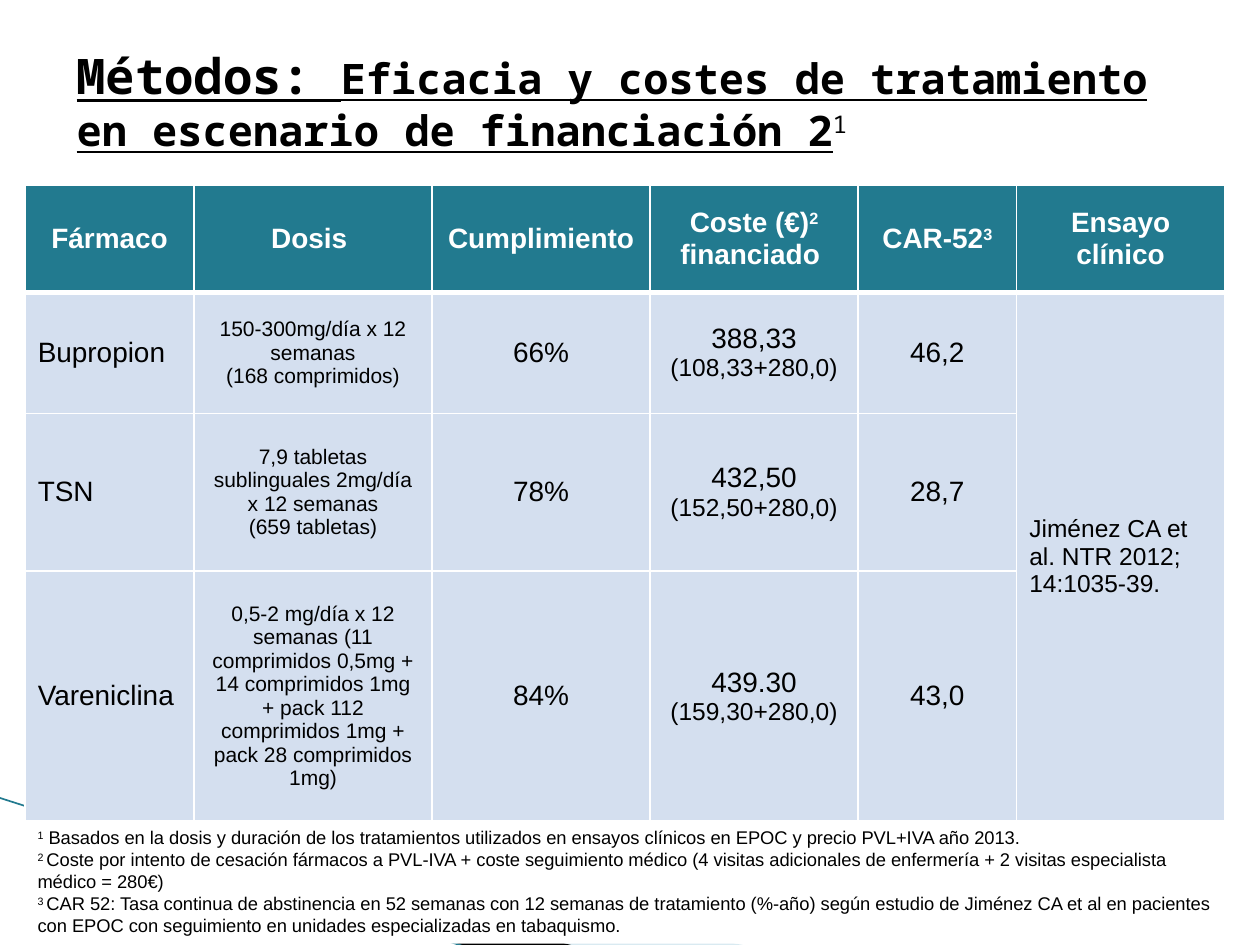
from lxml import etree
from pptx import Presentation
from pptx.dml.color import RGBColor
from pptx.enum.shapes import MSO_CONNECTOR, MSO_SHAPE
from pptx.enum.text import MSO_ANCHOR, PP_ALIGN
from pptx.oxml.ns import qn
from pptx.util import Inches, Pt

LEFT, CENTER = PP_ALIGN.LEFT, PP_ALIGN.CENTER
MIDDLE, TOP = MSO_ANCHOR.MIDDLE, MSO_ANCHOR.TOP
RECTANGLE = MSO_SHAPE.RECTANGLE
STRAIGHT = MSO_CONNECTOR.STRAIGHT

THEME = {
    "font": "Arial", "title_font": "Noto Sans Mono",
    "text": "000000", "white": "FFFFFF", "header": "227A8F", "body": "D4DFEF",
    "wave": "A0CBDC", "wave_shadow": "000000", "wave_line": "227A8F",
    "title": 28, "subtitle": 24, "normal": 16, "detail": 14, "dose": 12, "note": 10.5,
}

# A paragraph is a list of runs; a run is (text, size name, superscript).
TITLE = [("Métodos: ", "title", False),
         ("Eficacia y costes de tratamiento en escenario de financiación 2", "subtitle", False),
         ("1", "subtitle", True)]
HEADERS = [
    [("Fármaco", False)],
    [("Dosis ", False)],
    [("Cumplimiento ", False)],
    [("Coste (€)", False), ("2", True), (" financiado ", False)],
    [("CAR-52", False), ("3", True)],
    [("Ensayo clínico", False)],
]
# Drug, dose lines, compliance, cost, cost breakdown, abstinence rate
DRUGS = [
    ("Bupropion", ["150-300mg/día x 12 semanas", "(168 comprimidos)"],
     "66%", "388,33 ", "(108,33+280,0)", "46,2"),
    ("TSN", ["7,9 tabletas sublinguales 2mg/día x 12 semanas", "(659 tabletas)"],
     "78%", "432,50 ", "(152,50+280,0)", "28,7"),
    ("Vareniclina", ["0,5-2 mg/día x 12 semanas (11 comprimidos 0,5mg + 14 comprimidos 1mg "
                     "+ pack 112 comprimidos 1mg + pack 28 comprimidos 1mg)"],
     "84%", "439.30 ", "(159,30+280,0)", "43,0"),
]
TRIAL = "Jiménez CA et al. NTR 2012; 14:1035-39."
NOTES = [
    ("1", " Basados en la dosis y duración de los tratamientos utilizados en ensayos clínicos "
          "en EPOC y precio PVL+IVA año 2013."),
    ("2 ", "Coste por intento de cesación fármacos a PVL-IVA + coste seguimiento médico "
           "(4 visitas adicionales de enfermería + 2 visitas especialista médico = 280€)"),
    ("3 ", "CAR 52: Tasa continua de abstinencia en 52 semanas con 12 semanas de tratamiento "
           "(%-año) según estudio de Jiménez CA et al en pacientes con EPOC con seguimiento "
           "en unidades especializadas en tabaquismo."),
]
COLUMN_WIDTHS = [1.34, 1.89, 1.73, 1.65, 1.26, 1.65]
ROW_HEIGHTS = [0.85, 0.96, 1.25, 1.99]
TABLE_LEFT, TABLE_TOP, TABLE_WIDTH = 0.2, 1.47, 9.53
WAVES = [
    ([(0.55, 6.51), (5.95, 7.51), (4.56, 7.51), (0.55, 6.5)], "wave", 40),
    ([(0.53, 6.49), (4.57, 7.51), (3.72, 7.52), (0.54, 6.5)], "wave_shadow", 100),
]


def color(name):
    return RGBColor.from_string(THEME[name])


def write(text_frame, paragraphs, align=LEFT, anchor=MIDDLE, font="font",
          ink="text", bold=False):
    text_frame.word_wrap = True
    text_frame.vertical_anchor = anchor
    for index, runs in enumerate(paragraphs):
        paragraph = text_frame.paragraphs[0] if index == 0 else text_frame.add_paragraph()
        paragraph.alignment = align
        for text, size, superscript in runs:
            run = paragraph.add_run()
            run.text = text
            run.font.name = THEME[font]
            run.font.size = Pt(THEME[size])
            run.font.bold = bold
            run.font.color.rgb = color(ink)
            if superscript:
                run._r.get_or_add_rPr().set("baseline", "30000")


def set_borders(cell, widths):
    """Draw white borders; widths maps a side (L, R, T, B) to points."""
    properties = cell._tc.get_or_add_tcPr()
    for index, (side, width) in enumerate(widths.items()):
        line = etree.Element(qn(f"a:ln{side}"), w=str(Pt(width)))
        fill = etree.SubElement(line, qn("a:solidFill"))
        etree.SubElement(fill, qn("a:srgbClr"), val=THEME["white"])
        properties.insert(index, line)


def add_waves(slide):
    for points, fill, opacity in WAVES:
        corners = [(Inches(x), Inches(y)) for x, y in points]
        builder = slide.shapes.build_freeform(*corners[0])
        builder.add_line_segments(corners[1:], close=True)
        wave = builder.convert_to_shape()
        wave.shadow.inherit = False
        wave.fill.solid()
        wave.fill.fore_color.rgb = color(fill)
        wave.line.fill.background()
        tint = wave._element.spPr.find(".//" + qn("a:srgbClr"))
        etree.SubElement(tint, qn("a:alpha"), val=str(opacity * 1000))
    line = slide.shapes.add_connector(STRAIGHT, Inches(-0.01), Inches(6.33),
                                      Inches(3.71), Inches(7.52))
    line.line.color.rgb = color("wave_line")
    line.line.width = Pt(0.95)
    etree.SubElement(line._element.spPr, qn("a:effectLst"))


def add_treatment_table(slide):
    table = slide.shapes.add_table(
        len(ROW_HEIGHTS), len(COLUMN_WIDTHS), Inches(TABLE_LEFT), Inches(TABLE_TOP),
        Inches(TABLE_WIDTH), Inches(sum(ROW_HEIGHTS))).table
    table.horz_banding = False
    for column, width in zip(table.columns, COLUMN_WIDTHS):
        column.width = Inches(width)
    for index, (row, height) in enumerate(zip(table.rows, ROW_HEIGHTS)):
        row.height = Inches(height)
        for cell in row.cells:
            cell.vertical_anchor = MIDDLE
            cell.fill.solid()
            cell.fill.fore_color.rgb = color("body" if index else "header")
            set_borders(cell, {"L": 1, "R": 1, "T": 3 if index == 1 else 1,
                               "B": 1 if index else 3})

    for column, pieces in enumerate(HEADERS):
        runs = [(text, "normal", superscript) for text, superscript in pieces]
        write(table.cell(0, column).text_frame, [runs], CENTER, ink="white", bold=True)
    for row, (drug, doses, compliance, cost, breakdown, rate) in enumerate(DRUGS, 1):
        contents = [
            [[(drug, "normal", False)]],
            [[(dose, "dose", False)] for dose in doses],
            [[(compliance, "normal", False)]],
            [[(cost, "normal", False), (breakdown, "detail", False)]],
            [[(rate, "normal", False)]],
        ]
        for column, paragraphs in enumerate(contents):
            cell = table.cell(row, column)
            if column in (2, 3):
                cell.margin_left = cell.margin_right = 0
                cell.margin_top = cell.margin_bottom = 0
            write(cell.text_frame, paragraphs, CENTER if column else LEFT)
    trial = table.cell(1, 5)
    trial.merge(table.cell(len(DRUGS), 5))
    write(trial.text_frame, [[(TRIAL, "detail", False)]])


def add_title(slide):
    title = slide.shapes.add_textbox(Inches(0.51), Inches(0.36), Inches(9), Inches(0.87))
    write(title.text_frame, [TITLE], font="title_font", bold=True)
    *headings, mark = title.text_frame.paragraphs[0].runs
    for run in headings:
        run.font.underline = True
    mark.font.bold = False


def add_notes(slide):
    box = slide.shapes.add_shape(RECTANGLE, Inches(TABLE_LEFT), Inches(6.51),
                                 Inches(TABLE_WIDTH), Inches(0.98))
    box.shadow.inherit = False
    box.fill.solid()
    box.fill.fore_color.rgb = color("white")
    box.line.fill.background()
    write(box.text_frame, [[(mark, "note", True), (text, "note", False)]
                           for mark, text in NOTES], anchor=TOP)


def main():
    presentation = Presentation()
    presentation.slide_width, presentation.slide_height = Inches(10), Inches(7.5)
    slide = presentation.slides.add_slide(presentation.slide_layouts[6])
    add_waves(slide)
    add_treatment_table(slide)
    add_title(slide)
    add_notes(slide)
    presentation.save("out.pptx")


if __name__ == "__main__":
    main()
